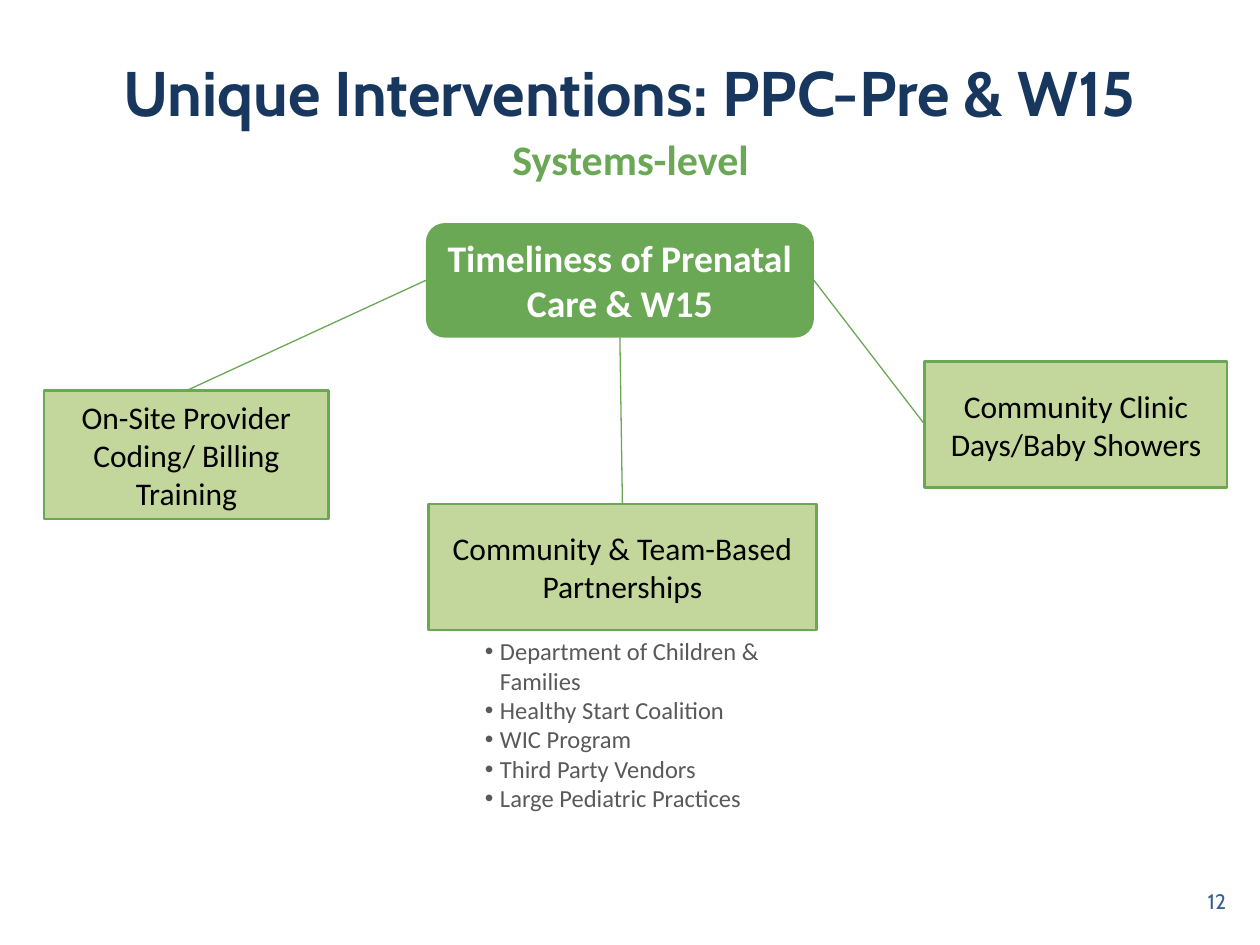
from lxml.etree import SubElement
from pptx import Presentation
from pptx.dml.color import RGBColor
from pptx.enum.shapes import MSO_CONNECTOR, MSO_SHAPE
from pptx.enum.text import MSO_ANCHOR, PP_ALIGN
from pptx.oxml.ns import qn
from pptx.util import Inches, Pt

NAVY = RGBColor(0x17, 0x37, 0x5E)
BLUE = RGBColor(0x37, 0x60, 0x92)
GREEN = RGBColor(0x6B, 0xA8, 0x56)
PALE = RGBColor(0xC3, 0xD6, 0x9B)
GREY = RGBColor(0x59, 0x59, 0x59)
BLACK = RGBColor(0, 0, 0)
WHITE = RGBColor(255, 255, 255)

COLS, ROWS = 100, 75
CELL = Inches(0.1)
TOP, LEFT, BOTTOM, RIGHT = range(4)

PARTNERS = [
    "Department of Children & Families",
    "Healthy Start Coalition",
    "WIC Program",
    "Third Party Vendors",
    "Large Pediatric Practices",
]
INTERVENTIONS = [
    ("On-Site Provider Coding/ Billing Training", (3.5, 31, 22.6, 10.2), LEFT, TOP),
    ("Community & Team-Based Partnerships", (34, 40, 30.8, 10), BOTTOM, TOP),
    ("Community Clinic Days/Baby Showers", (73.4, 28.7, 24, 10), RIGHT, LEFT),
]


def grid(box):
    return [round(v * CELL) for v in box]


def add_bullet(p):
    pPr = p._p.get_or_add_pPr()
    pPr.set("marL", str(Inches(0.31)))
    pPr.set("indent", str(Inches(-0.12)))
    SubElement(pPr, qn("a:buFont"), typeface="Arial")
    SubElement(pPr, qn("a:buChar"), char="•")


def write(sp, *lines, size, color, font="Calibri", bold=False,
          align=PP_ALIGN.CENTER, anchor=MSO_ANCHOR.MIDDLE, bullets=False):
    tf = sp.text_frame
    tf.word_wrap = True
    tf.vertical_anchor = anchor
    for i, line in enumerate(lines):
        p = tf.add_paragraph() if i else tf.paragraphs[0]
        p.alignment = align
        if bullets:
            add_bullet(p)
        r = p.add_run()
        r.text = line
        r.font.name = font
        r.font.size = Pt(size)
        r.font.bold = bold
        r.font.color.rgb = color


def add_text(s, box, *lines, **fmt):
    write(s.shapes.add_textbox(*grid(box)), *lines, **fmt)


def add_box(s, kind, box, text, fill, outlined=False, **fmt):
    sp = s.shapes.add_shape(kind, *grid(box))
    sp.shadow.inherit = False
    sp.fill.solid()
    sp.fill.fore_color.rgb = fill
    if outlined:
        sp.line.color.rgb = GREEN
        sp.line.width = Pt(1.5)
    else:
        sp.line.fill.background()
    write(sp, text, **fmt)
    return sp


def add_link(s, start, start_site, end, end_site):
    line = s.shapes.add_connector(MSO_CONNECTOR.STRAIGHT, 0, 0, 0, 0)
    line.begin_connect(start, start_site)
    line.end_connect(end, end_site)
    line.line.color.rgb = GREEN
    line.line.width = Pt(0.75)
    SubElement(line._element.spPr, qn("a:effectLst"))


def add_heading(s, box):
    x, y, w, h = box
    add_text(s, (x, y, w, h), "Unique Interventions: PPC-Pre & W15",
             size=36, color=NAVY, font="Cabin", bold=True)
    add_text(s, (35.3, y + 9.1, 29.5, 5), "Systems-level",
             size=24, color=GREEN, bold=True, anchor=MSO_ANCHOR.TOP)


def add_diagram(s, box):
    hub = add_box(s, MSO_SHAPE.ROUNDED_RECTANGLE, box,
                  "Timeliness of Prenatal Care & W15", GREEN,
                  size=21.5, color=WHITE, bold=True)
    for text, place, hub_site, site in INTERVENTIONS:
        sp = add_box(s, MSO_SHAPE.RECTANGLE, place, text, PALE,
                     outlined=True, size=18, color=BLACK)
        add_link(s, hub, hub_site, sp, site)


def add_partners(s, box):
    add_text(s, box, *PARTNERS, size=14, color=GREY, align=PP_ALIGN.LEFT,
             anchor=MSO_ANCHOR.TOP, bullets=True)


def add_page_number(s, box):
    add_text(s, box, "12", size=12, color=BLUE, font="Cabin",
             align=PP_ALIGN.RIGHT)


def main():
    prs = Presentation()
    prs.slide_width, prs.slide_height = grid((COLS, ROWS))
    s = prs.slides.add_slide(prs.slide_layouts[6])
    add_heading(s, (4.2, 1, 91.5, 12.5))
    add_diagram(s, (33.8, 17.7, 30.8, 9.1))
    add_partners(s, (35.6, 50, 25.9, 15.1))
    add_page_number(s, (75, 69.5, 23.3, 4))
    prs.save("out.pptx")


if __name__ == "__main__":
    main()
